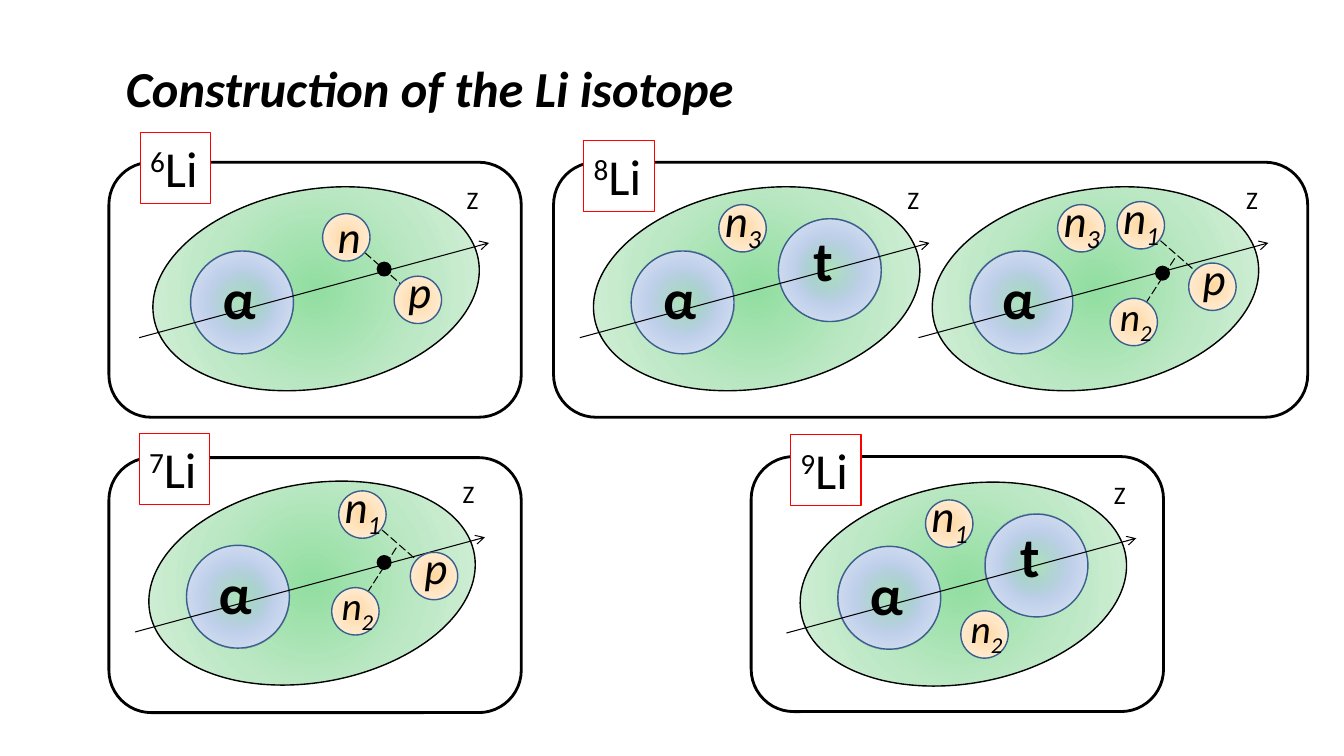
from dataclasses import dataclass

from pptx import Presentation
from pptx import util as u
from pptx.dml.color import RGBColor
from pptx.enum import dml, shapes, text
from pptx.oxml import parse_xml
from pptx.oxml.ns import nsdecls, qn

PX = 9144  # 100 px to the inch


@dataclass(frozen=True)
class Theme:
    font: str = "Calibri"
    ink: str = "000000"
    paper: str = "FFFFFF"
    frame: str = "FF0000"
    rim: str = "3A5F8C"
    green: tuple = ("91DEA0", "BDE8C5", "DFF3E3")
    blue: tuple = ("9AB5E4", "C2D1ED", "E1E8F5")
    peach: tuple = ("FFD8A0", "FFE6C5", "FFF2E3")
    title: int = 36
    core: int = 40
    large: int = 32
    small: int = 28
    axis: int = 18


T = Theme()

# Particle label: offset from the circle and box size, then type size
LABELS = {
    "α": (22, 8, 53, 77, T.core),
    "t": (25, 2, 40, 77, T.core),
    "n": (5, -10, 43, 64, T.large),
    "p": (4, -17, 43, 64, T.large),
    "n1": (-4, -17, 59, 64, T.large),
    "n2": (0, -11, 54, 57, T.small),
    "n3": (-4, -17, 59, 64, T.large),
}


def px(*vals):
    return [u.Emu(v * PX) for v in vals]


def rgb(code):
    return RGBColor.from_string(code)


def edge(line, color, width):
    line.color.rgb = rgb(color)
    line.width = u.Pt(width)


def glow(shape, stops, clear):
    """Fill from the centre outwards; clear makes the centre see-through."""
    alpha = '<a:alpha val="0"/>' if clear else ""
    marks = "".join(
        f'<a:gs pos="{i * 50000}"><a:srgbClr val="{c}">{"" if i else alpha}</a:srgbClr></a:gs>'
        for i, c in enumerate(stops))
    shape.fill.solid()
    props = shape._element.spPr
    props.replace(props.find(qn("a:solidFill")), parse_xml(
        f'<a:gradFill {nsdecls("a")} rotWithShape="1"><a:gsLst>{marks}</a:gsLst>'
        '<a:path path="circle"><a:fillToRect l="50000" t="50000" r="50000" b="50000"/>'
        '</a:path></a:gradFill>'))


def solid(host, kind, box, fill, line, width, clear=False):
    shape = host.add_shape(kind, *px(*box))
    shape.shadow.inherit = False
    edge(shape.line, line, width)
    if fill is None:
        shape.fill.background()
    elif isinstance(fill, tuple):
        glow(shape, fill, clear)
    else:
        shape.fill.solid()
        shape.fill.fore_color.rgb = rgb(fill)
    return shape


def label(host, box, runs, size, bold=False, italic=False):
    """Runs are pairs of wording and baseline shift in percent."""
    area = host.add_textbox(*px(*box))
    frame = area.text_frame
    frame.word_wrap = False
    frame.auto_size = text.MSO_AUTO_SIZE.SHAPE_TO_FIT_TEXT
    para = frame.paragraphs[0]
    font = para.font
    font.name, font.size = T.font, u.Pt(size)
    font.bold, font.italic = bold, italic
    font.color.rgb = rgb(T.ink)
    for words, shift in runs:
        run = para.add_run()
        run.text = words
        if shift:
            run._r.get_or_add_rPr().set("baseline", str(shift * 1000))
    return area


def link(host, ends, dash=False, arrow=False):
    line = host.add_connector(shapes.MSO_CONNECTOR.STRAIGHT, *px(*ends))
    edge(line.line, T.ink, 0.75)
    if dash:
        line.line.dash_style = dml.MSO_LINE.LONG_DASH
    if arrow:
        line.line._get_or_add_ln().append(
            parse_xml(f'<a:tailEnd {nsdecls("a")} type="arrow"/>'))
    line._element.spPr.append(parse_xml(f'<a:effectLst {nsdecls("a")}/>'))


def ball(host, name, x, y):
    """A particle: circle and letter in one group."""
    core = name in ("α", "t")
    dia, fill = (102, T.blue) if core else (47, T.peach)
    dx, dy, w, h, size = LABELS[name]
    group = host.add_group_shape().shapes
    solid(group, shapes.MSO_SHAPE.OVAL, (x, y, dia, dia), fill, T.rim, 1, core)
    runs = [(name[0], 0)] + [(sub, -25) for sub in name[1:]]
    label(group, (x + dx, y + dy, w, h), runs, size, core, not core)


def dot(host, x, y):
    solid(host, shapes.MSO_SHAPE.OVAL, (x, y, 12, 12), T.ink, T.ink, 2)


def panel(host, x, y, w):
    solid(host, shapes.MSO_SHAPE.ROUNDED_RECTANGLE, (x, y, w, 253), None, T.ink, 2)


def badge(host, x, y, mass):
    area = label(host, (x, y, 70, 71), [(mass, 30), ("Li", 0)], T.title)
    area.fill.solid()
    area.fill.fore_color.rgb = rgb(T.paper)
    edge(area.line, T.frame, 0.75)


def cloud(host, x, y, triton=False):
    """Tilted nucleus with its alpha core, optional triton and z axis."""
    oval = solid(host, shapes.MSO_SHAPE.OVAL, (x, y, 327, 197), T.green, T.ink, 1)
    oval.rotation = 349.8
    ball(host, "α", x + 39, y + 61)
    if triton:
        ball(host, "t", x + 185, y + 29)
    label(host, (x + 303, y - 10, 32, 40), [("Z", 0)], T.axis)
    link(host, (x - 12, y + 147, x + 335, y + 53), arrow=True)


def trio(host, x, y):
    """Proton bound to two neutrons, placed from the first neutron."""
    link(host, (x + 26, y + 24, x + 96, y + 85), dash=True)
    dot(host, x + 39, y + 65)
    link(host, (x + 16, y + 120, x + 58, y + 55), dash=True)
    ball(host, "n1", x, y)
    ball(host, "n2", x - 7, y + 96)
    ball(host, "p", x + 71, y + 61)


def duo(host, x, y):
    """Proton bound to one neutron."""
    link(host, (x + 25, y + 24, x + 95, y + 85), dash=True)
    ball(host, "n", x, y)
    ball(host, "p", x + 71, y + 62)
    dot(host, x + 55, y + 49)


def main():
    deck = Presentation()
    deck.slide_width, deck.slide_height = px(1333, 750)
    host = deck.slides.add_slide(deck.slide_layouts[6]).shapes

    # Title
    label(host, (115, 52, 645, 71), [("Construction of the Li isotope", 0)],
          T.title, True, True)

    # Panels and isotope names
    for x, y, w, bx, by, mass in (
            (108, 161, 409, 139, 131, "6"), (108, 454, 409, 138, 430, "7"),
            (549, 161, 748, 579, 139, "8"), (745, 453, 409, 784, 431, "9")):
        panel(host, x, y, w)
        badge(host, bx, by, mass)

    # Lithium 6
    cloud(host, 150, 188)
    duo(host, 320, 212)

    # Lithium 7
    cloud(host, 146, 480)
    trio(host, 336, 487)

    # Lithium 8, two configurations
    cloud(host, 587, 188, triton=True)
    ball(host, "n3", 713, 203)
    cloud(host, 923, 188)
    ball(host, "n3", 1049, 203)
    trio(host, 1108, 200)

    # Lithium 9
    cloud(host, 792, 481, triton=True)
    ball(host, "n1", 918, 496)
    ball(host, "n2", 953, 606)

    deck.save("out.pptx")


if __name__ == "__main__":
    main()
